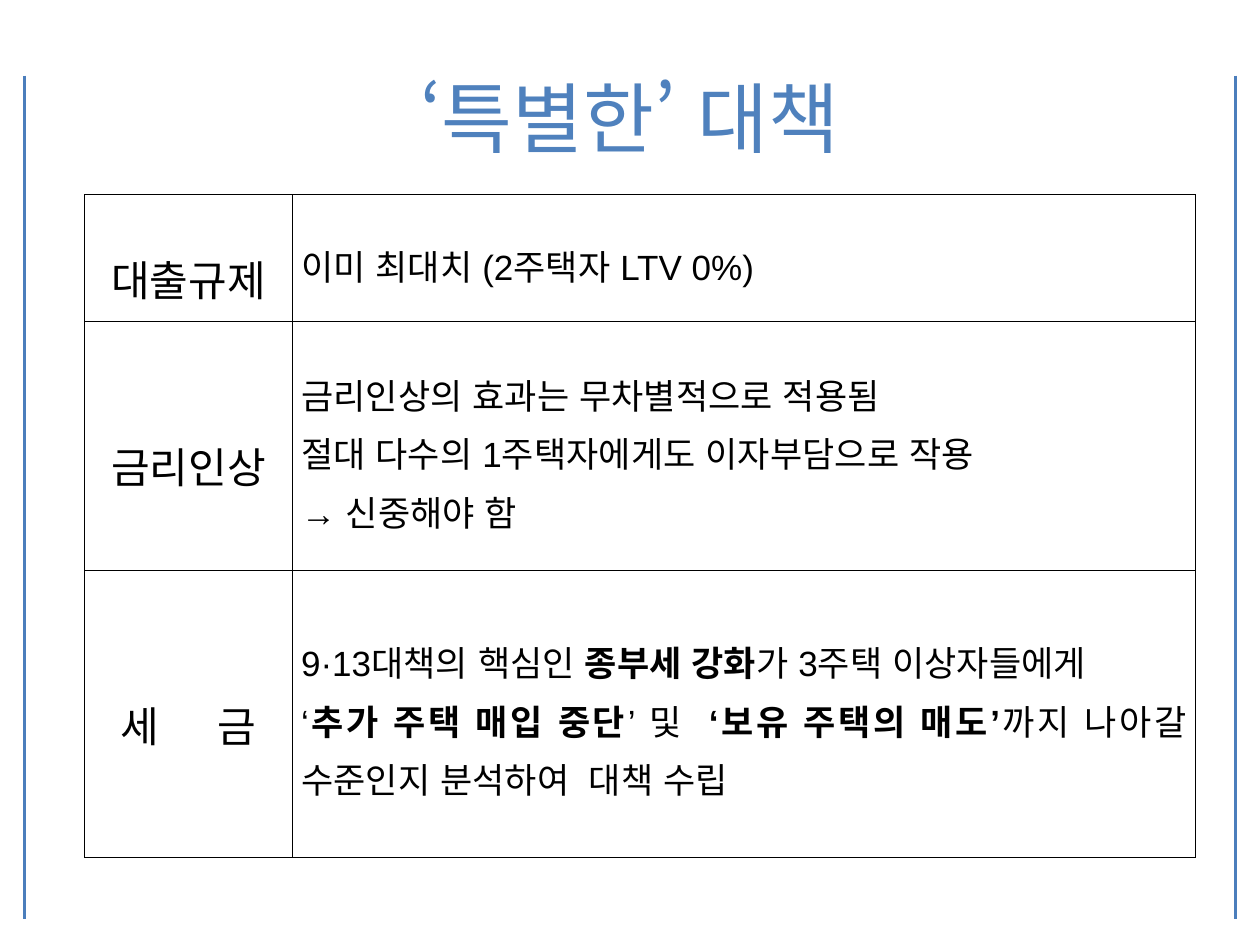
from dataclasses import dataclass

from lxml import etree
from pptx import Presentation
from pptx.dml.color import RGBColor
from pptx.enum.lang import MSO_LANGUAGE_ID
from pptx.enum.shapes import MSO_CONNECTOR
from pptx.enum.text import MSO_ANCHOR, PP_ALIGN
from pptx.oxml.ns import qn
from pptx.util import Inches, Pt

LINE = MSO_CONNECTOR.STRAIGHT
MIDDLE = MSO_ANCHOR.MIDDLE
CENTER, JUSTIFY = PP_ALIGN.CENTER, PP_ALIGN.JUSTIFY
KOREAN = MSO_LANGUAGE_ID.KOREAN

GRID = 100, 75
COLS = 16.5, 71.7
ROWS = 10.08, 19.7, 22.8
GAP = 27

TABLE = [
    ("대출규제", 2, ["이미 최대치 (2주택자 LTV 0%)"]),
    ("금리인상", 2, [
        "금리인상의 효과는 무차별적으로 적용됨",
        "절대 다수의 1주택자에게도 이자부담으로 작용",
        "→ 신중해야 함",
    ]),
    ("세| |금", 1.6, [
        "9·13대책의 핵심인 *종부세 강화*가 3주택 이상자들에게",
        "‘*추가 주택 매입 중단*’ 및  *‘보유 주택의 매도’*"
        "까지 나아갈 수준인지 분석하여  대책 수립",
    ]),
]


@dataclass(frozen=True)
class Theme:
    """Colours, fonts and type sizes of the deck."""
    title: str = "4F81BD"
    rule: str = "4B7EBC"
    ink: str = "000000"
    head: str = "Noto Sans CJK KR"
    text: str = "Arial"
    big: int = 44
    label: int = 24
    body: int = 20
    edge: float = 0.28
    stroke: float = 1.75


class Deck:
    """Draws styled elements on the current slide."""

    def __init__(self, theme):
        """Start a deck with one blank slide."""
        self.theme = theme
        self.deck = Presentation()
        self.deck.slide_width, self.deck.slide_height = Inches(10), Inches(7.5)
        self.slide = self.deck.slides.add_slide(self.deck.slide_layouts[6])

    def grid(self, col, row):
        """Turn columns and rows into slide lengths."""
        wide, high = self.deck.slide_width, self.deck.slide_height
        return round(wide * col / GRID[0]), round(high * row / GRID[1])

    def style(self, run, size, color, name, bold=False):
        """Set the face, size, weight and colour of a run."""
        font = run.font
        font.size, font.bold, font.name = Pt(size), bold, name
        font.language_id = KOREAN
        font.color.rgb = RGBColor.from_string(color)
        face = etree.SubElement(font._element, qn("a:ea"))
        face.set("typeface", name)

    def title(self, text, spot, size):
        """Add the centred heading."""
        box = self.slide.shapes.add_textbox(*self.grid(*spot), *self.grid(*size))
        frame = box.text_frame
        frame.text = text
        frame.word_wrap, frame.vertical_anchor = True, MIDDLE
        para = frame.paragraphs[0]
        para.alignment = CENTER
        self.style(para.runs[0], self.theme.big, self.theme.title, self.theme.head)

    def rule(self, start, end):
        """Add a straight line."""
        line = self.slide.shapes.add_connector(LINE, *self.grid(*start), *self.grid(*end))
        line.line.color.rgb = RGBColor.from_string(self.theme.rule)
        line.line.width = Pt(self.theme.stroke)
        etree.SubElement(line._element.spPr, qn("a:effectLst"))

    def border(self, cell):
        """Outline a cell on all four sides."""
        props = cell._tc.get_or_add_tcPr()
        for spot, side in enumerate(("lnL", "lnR", "lnT", "lnB")):
            edge = etree.Element(qn(f"a:{side}"), w=str(int(Pt(self.theme.edge))))
            fill = etree.SubElement(edge, qn("a:solidFill"))
            etree.SubElement(fill, qn("a:srgbClr"), val=self.theme.ink)
            props.insert(spot, edge)

    def cell(self, cell, lines, size, align, pitch):
        """Fill a cell; stars mark bold, bars mark a wide gap."""
        cell.fill.background()
        self.border(cell)
        cell.vertical_anchor = MIDDLE
        cell.margin_left = cell.margin_right = Inches(0.07)
        cell.margin_top = cell.margin_bottom = Inches(0.02)
        frame = cell.text_frame
        for spot, line in enumerate(lines):
            para = frame.add_paragraph() if spot else frame.paragraphs[0]
            para.alignment, para.line_spacing = align, pitch
            for turn, part in enumerate(line.split("*")):
                for text in filter(None, part.split("|")):
                    run = para.add_run()
                    run.text = text
                    self.style(run, size, self.theme.ink, self.theme.text, turn % 2 == 1)
                    if text == " ":
                        run.font._element.set("spc", str(GAP * 100))

    def table(self, data, spot, cols, rows):
        """Add a table of labels and justified notes."""
        size = self.grid(sum(cols), sum(rows))
        table = self.slide.shapes.add_table(
            len(rows), len(cols), *self.grid(*spot), *size).table
        table.first_row = table.horz_banding = False
        for col, wide in zip(table.columns, cols):
            col.width = self.grid(wide, 0)[0]
        for row, high, (label, pitch, notes) in zip(table.rows, rows, data):
            row.height = self.grid(0, high)[1]
            self.cell(row.cells[0], [label], self.theme.label, CENTER, pitch)
            self.cell(row.cells[1], notes, self.theme.body, JUSTIFY, 1.5)


def main():
    """Build and save the slide."""
    deck = Deck(Theme())
    deck.title("‘특별한’ 대책", (5, 3), (90, 12.5))
    deck.table(TABLE, (6.7, 15.45), COLS, ROWS)
    for col in (1.95, 98.05):
        deck.rule((col, 6), (col, 72.9))
    deck.deck.save("out.pptx")


if __name__ == "__main__":
    main()
